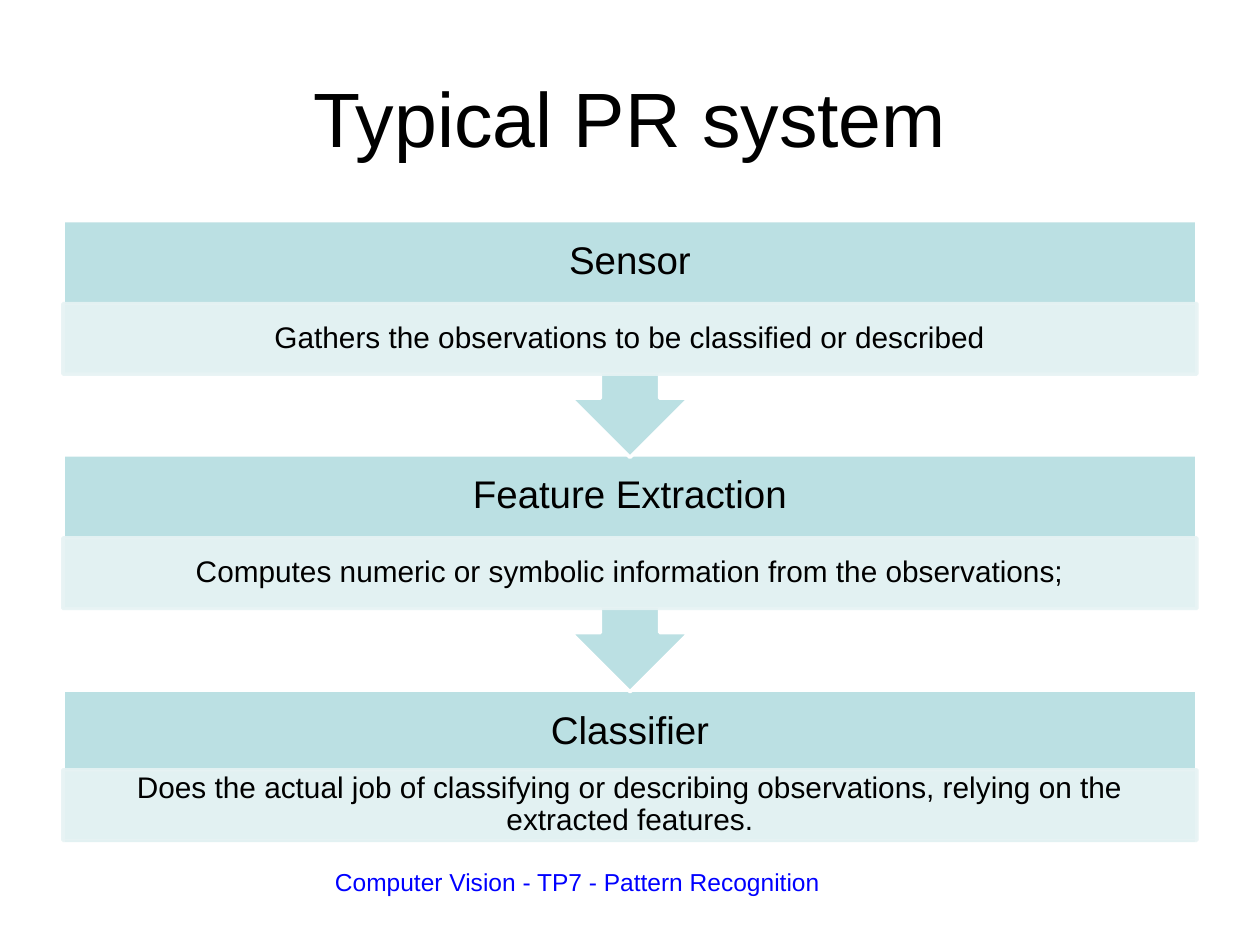
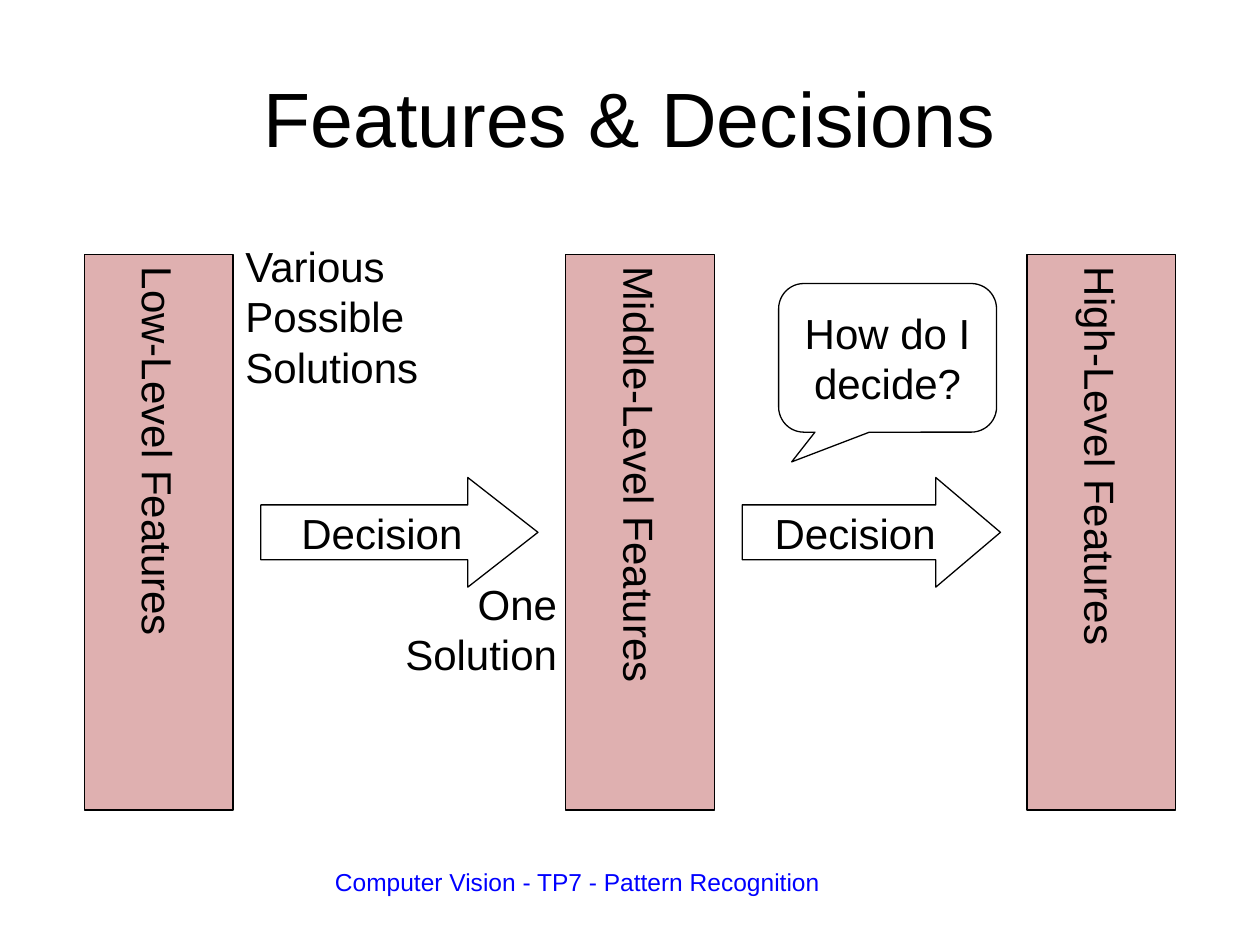
from lxml import etree
from pptx import Presentation
from pptx import util as u
from pptx.dml.color import RGBColor
from pptx.enum import shapes, text
from pptx.oxml.ns import qn

C = {"ink": "000000", "white": "FFFFFF", "footer": "0000FF",
     "step": "BBE0E3", "detail": "E7F3F4", "level": "990000"}
FONT = "Arial"
MS, AL, AN = shapes.MSO_SHAPE, text.PP_ALIGN, text.MSO_ANCHOR


def add_shape(s, kind, at, fill=None, line="ink", weight=0.75, alpha=None, line_alpha=None):
    sp = s.shapes.add_shape(kind, *[u.Inches(v) for v in at])
    sp.shadow.inherit = False
    if fill:
        sp.fill.solid()
        sp.fill.fore_color.rgb = RGBColor.from_string(C[fill])
    else:
        sp.fill.background()
    sp.line.color.rgb = RGBColor.from_string(C[line])
    sp.line.width = u.Pt(weight)
    for part, value in (("a:solidFill", alpha), ("a:ln/a:solidFill", line_alpha)):
        if value:
            clr = sp._element.spPr.find(part + "/a:srgbClr", sp._element.nsmap)
            etree.SubElement(clr, qn("a:alpha")).set("val", str(value * 1000))
    return sp


def add_text(s, words, size, at=None, sp=None, color="ink", align=AL.CENTER, spacing=None,
             inset=(0.1, 0.05), **frame):
    sp = sp or s.shapes.add_textbox(*[u.Inches(v) for v in at])
    tf = sp.text_frame
    sides = {"margin_left": inset[0], "margin_right": inset[0],
             "margin_top": inset[1], "margin_bottom": inset[1]}
    for name, value in sides.items():
        setattr(tf, name, u.Inches(value))
    for name, value in {"word_wrap": True, "vertical_anchor": AN.MIDDLE, **frame}.items():
        setattr(tf, name, value)
    p = tf.paragraphs[0]
    p.text = words
    p.alignment = align
    p.line_spacing = spacing
    for r in p.runs:
        for name, value in {"size": u.Pt(size), "name": FONT}.items():
            setattr(r.font, name, value)
        r.font.color.rgb = RGBColor.from_string(C[color])
    return sp


prs = Presentation()
prs.slide_width, prs.slide_height = u.Inches(10), u.Inches(7.5)
slides = []
for title in ("Typical PR system", "Features & Decisions"):
    s = prs.slides.add_slide(prs.slide_layouts[6])
    add_text(s, title, 44, (0.5, 0.3, 9, 1.25))
    add_text(s, "Computer Vision - TP7 - Pattern Recognition", 14, (2.56, 6.83, 6.14, 0.52),
             color="footer", align=AL.LEFT, vertical_anchor=AN.TOP)
    slides.append(s)
flow, features = slides

steps = [
    ("Classifier", "Does the actual job of classifying or describing observations, "
     "relying on the extracted features.", MS.RECTANGLE, 5.48, 1.22, 0.63),
    ("Feature Extraction", "Computes numeric or symbolic information from the observations;",
     MS.UP_ARROW_CALLOUT, 3.61, 1.88, 0.66),
    ("Sensor", "Gathers the observations to be classified or described",
     MS.UP_ARROW_CALLOUT, 1.75, 1.88, 0.66),
]
for name, detail, kind, top, height, offset in steps:
    sp = add_shape(flow, kind, (0.5, top, 9, height), "step", "white", 2)
    if kind == MS.UP_ARROW_CALLOUT:
        sp.rotation = 180
    add_text(flow, name, 22, (0.5, top, 9, 0.66), spacing=0.9, inset=(0.17, 0.17))
    sp = add_shape(flow, MS.RECTANGLE, (0.5, top + offset, 9, 0.56), "detail", "detail", 2, 90, 90)
    add_text(flow, detail, 17, sp=sp, spacing=0.9, inset=(0.13, 0.02))

for level, left in (("Low", 0.67), ("Middle", 4.49), ("High", 8.15)):
    sp = add_shape(features, MS.RECTANGLE, (left, 2.02, 1.18, 4.41), "level", alpha=31)
    add_text(features, f"{level}-Level Features", 24, sp=sp, word_wrap=False)
    sp.text_frame._txBody.bodyPr.set("vert", "eaVert")

for left, width, head in ((2.07, 2.2, 0.64), (5.89, 2.05, 0.59)):
    sp = add_shape(features, MS.RIGHT_ARROW, (left, 3.79, width, 0.87))
    sp.adjustments[1] = head
    add_text(features, "Decision", 24, sp=sp, word_wrap=False)

for words, at, align in (("Various\nPossible\nSolutions", (1.85, 1.86, 1.57, 1.3), AL.LEFT),
                         ("One\nSolution", (3.11, 4.54, 1.41, 0.9), AL.RIGHT)):
    add_text(features, words, 24, at, align=align, word_wrap=False, vertical_anchor=AN.TOP,
             auto_size=text.MSO_AUTO_SIZE.SHAPE_TO_FIT_TEXT)

sp = add_shape(features, MS.ROUNDED_RECTANGULAR_CALLOUT, (6.18, 2.25, 1.73, 1.18))
for i, value in enumerate((-0.44, 0.7, 0.17)):
    sp.adjustments[i] = value
add_text(features, "How do I decide?", 24, sp=sp)

prs.save("out.pptx")
